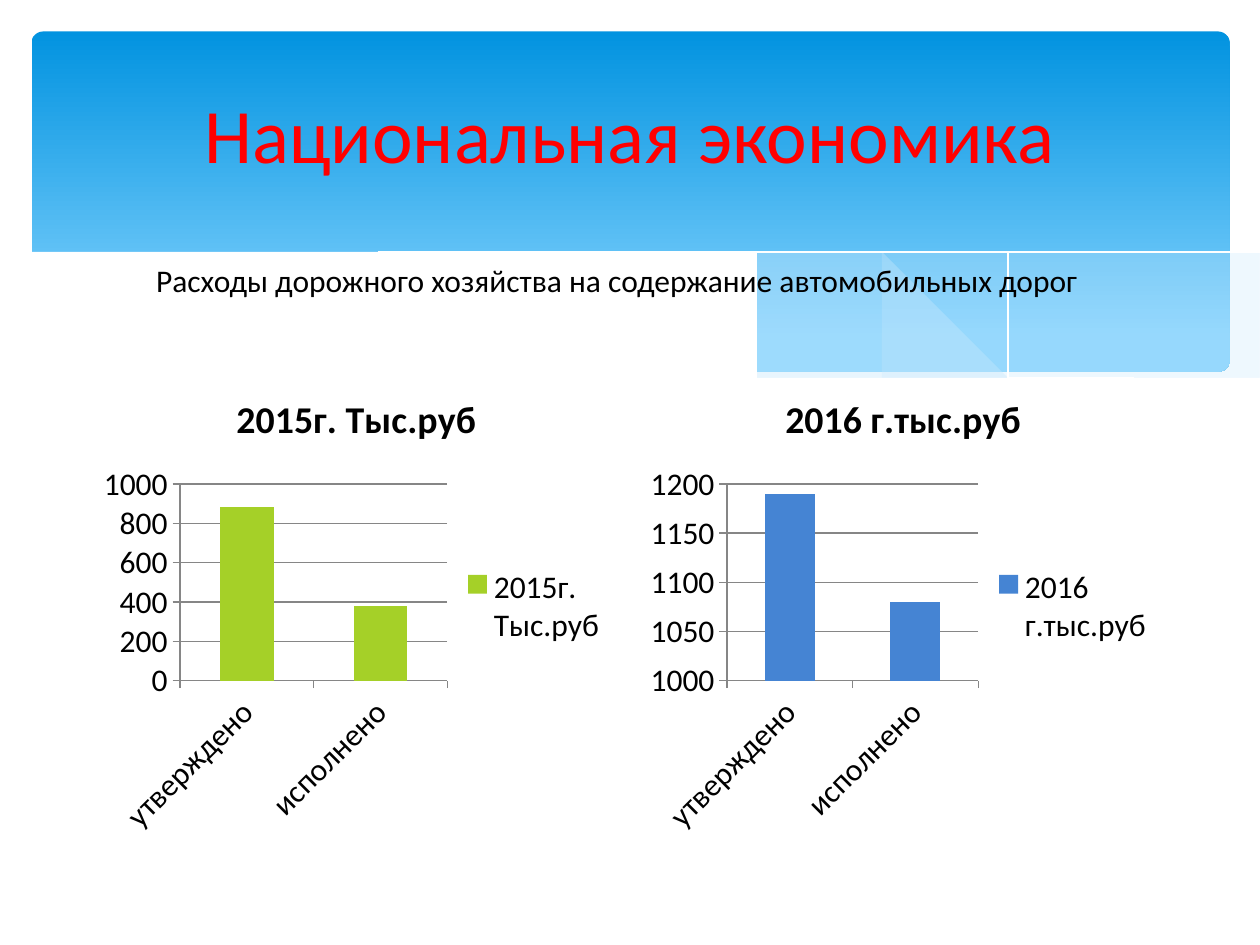
from dataclasses import dataclass

from lxml.etree import SubElement
from pptx import Presentation
from pptx.chart.data import CategoryChartData
from pptx.dml.color import RGBColor
from pptx.enum.chart import XL_CHART_TYPE as ChartType, XL_LEGEND_POSITION as LegendPos, XL_TICK_MARK as Tick
from pptx.enum.shapes import MSO_SHAPE as Preset
from pptx.enum.text import MSO_ANCHOR as Anchor, PP_ALIGN as Align
from pptx.oxml.ns import qn
from pptx.util import Inches, Pt


@dataclass(frozen=True)
class Theme:
    font: str = "Calibri"
    title_size: float = 44
    body_size: float = 18
    chart_title_size: float = 21.6
    title: str = "FF0000"
    ink: str = "000000"
    paper: str = "FFFFFF"
    banner_top: str = "0293E0"
    banner_bottom: str = "83D3FE"
    wave: str = "C6E7FC"
    axis: str = "868686"
    approved_2015: str = "A5D028"
    approved_2016: str = "4584D3"


THEME = Theme()
SLIDE_W, SLIDE_H = 10, 7.5

TITLE = "Национальная экономика"
SUBTITLE = "Расходы дорожного хозяйства на содержание автомобильных дорог"
CATEGORIES = ("утверждено", "исполнено")
# name, values, colour, axis (minimum, maximum, step)
BUDGETS = (
    ("2015г. Тыс.руб", (880, 380), THEME.approved_2015, (0, 1000, 200)),
    ("2016 г.тыс.руб", (1190, 1080), THEME.approved_2016, (1000, 1200, 50)),
)
CHART_LEFT, CHART_TOP, CHART_W, CHART_H, CHART_GAP = 0.74, 2.93, 4.18, 3.77, 0.16

# Each wave is a list of edges; an edge is smoothed through its anchors.
RIGHT_WAVE = (
    [(9.76, 2), (9.21, 2.1), (8.61, 2.23), (7.79, 2.42), (7.06, 2.57), (6.61, 2.65)],
    [(6.61, 2.65), (7.19, 2.72), (7.69, 2.77), (8.24, 2.77), (8.72, 2.74), (9.21, 2.65), (9.76, 2.47)],
)
MIDDLE_WAVE = (
    [(8.93, 2.73), (8.07, 2.6), (7.06, 2.4), (6.29, 2.22), (5.55, 2.05), (4.89, 1.94),
     (4.2, 1.87), (3.61, 1.85), (2.86, 1.91)],
    [(2.86, 1.91), (3.62, 2.03), (4.49, 2.22), (5.3, 2.4), (6.18, 2.58), (6.95, 2.7),
     (7.61, 2.77), (8.28, 2.78), (8.93, 2.73)],
)
FALLING_LINE = ([(3.09, 1.95), (3.53, 1.89), (4.16, 1.87), (4.89, 1.9), (5.56, 1.97),
                 (6.36, 2.08), (7.27, 2.26), (8.31, 2.51), (9.07, 2.72)],)
RISING_LINE = ([(6.13, 2.57), (6.72, 2.41), (7.48, 2.23), (8.36, 2.04), (8.95, 1.94), (9.38, 1.88), (9.75, 1.85)],)
PAPER_WAVE = (
    [(9.77, 2.46), (9.3, 2.62), (8.75, 2.73), (8.09, 2.77), (7.44, 2.74), (6.68, 2.65),
     (5.79, 2.5), (5.03, 2.33), (4.47, 2.2), (3.65, 2.02), (2.92, 1.9), (2.3, 1.85),
     (1.77, 1.84), (1.19, 1.87), (0.67, 1.97), (0.23, 2.13)],
    [(0.23, 3.29), (9.77, 3.29)],
)


def rgb(code):
    return RGBColor.from_string(code)


def smooth(anchors, steps=5):
    """Return points of a Catmull-Rom curve through the anchors."""
    padded = [anchors[0], *anchors, anchors[-1]]
    points = [anchors[0]]
    for a, b, c, d in zip(padded, padded[1:], padded[2:], padded[3:]):
        for step in range(1, steps + 1):
            t = step / steps
            points.append(tuple(
                0.5 * (2 * q + (r - p) * t + (2 * p - 5 * q + 4 * r - s) * t**2
                       + (3 * q - p - 3 * r + s) * t**3)
                for p, q, r, s in zip(a, b, c, d)))
    return points


def add_wave(slide, edges, fill=None, opacity=100, line=None):
    points = [point for edge in edges for point in smooth(edge)]
    builder = slide.shapes.build_freeform(*points[0], scale=Inches(1))
    builder.add_line_segments(points[1:], close=fill is not None)
    wave = builder.convert_to_shape()
    wave.shadow.inherit = False
    if fill:
        wave.fill.solid()
        wave.fill.fore_color.rgb = rgb(fill)
        if opacity < 100:
            colour = wave.fill._xPr.find(f"{qn('a:solidFill')}/{qn('a:srgbClr')}")
            SubElement(colour, qn("a:alpha"), val=str(opacity * 1000))
    else:
        wave.fill.background()
    if line:
        wave.line.color.rgb = rgb(line)
        wave.line.width = Pt(0)
    else:
        wave.line.fill.background()


def add_banner(slide):
    banner = slide.shapes.add_shape(Preset.ROUNDED_RECTANGLE, *map(Inches, (0.25, 0.25, 9.51, 2.7)))
    banner.adjustments[0] = 0.034
    banner.shadow.inherit = False
    banner.line.fill.background()
    banner.fill.gradient()
    banner.fill.gradient_angle = 270
    stops = ((0, THEME.banner_top), (0.9, THEME.banner_bottom))
    for stop, (position, colour) in zip(banner.fill.gradient_stops, stops):
        stop.position = position
        stop.color.rgb = rgb(colour)


def style_font(font, size, color=THEME.ink, bold=False):
    font.name, font.size, font.bold = THEME.font, Pt(size), bold
    font.color.rgb = rgb(color)


def add_text(slide, text, box, size, color=THEME.ink, align=Align.LEFT, anchor=Anchor.TOP, wrap=True):
    frame = slide.shapes.add_textbox(*map(Inches, box)).text_frame
    frame.word_wrap, frame.vertical_anchor = wrap, anchor
    paragraph = frame.paragraphs[0]
    paragraph.alignment = align
    run = paragraph.add_run()
    run.text = text
    style_font(run.font, size, color)


def add_budget_chart(slide, column, name, values, color, scale):
    data = CategoryChartData()
    data.categories = CATEGORIES
    data.add_series(name, values)
    left = CHART_LEFT + column * (CHART_W + CHART_GAP)
    chart = slide.shapes.add_chart(
        ChartType.COLUMN_STACKED, *map(Inches, (left, CHART_TOP, CHART_W, CHART_H)), data).chart
    style_font(chart.font, THEME.body_size)

    chart.has_title = True
    heading = chart.chart_title.text_frame
    heading.text = name
    style_font(heading.paragraphs[0].runs[0].font, THEME.chart_title_size, bold=True)
    chart.has_legend = True
    chart.legend.position = LegendPos.RIGHT
    chart.legend.include_in_layout = False

    plot = chart.plots[0]
    plot.gap_width, plot.overlap, plot.vary_by_categories = 150, 100, False
    bars = plot.series[0].format.fill
    bars.solid()
    bars.fore_color.rgb = rgb(color)

    amounts = chart.value_axis
    amounts.minimum_scale, amounts.maximum_scale, amounts.major_unit = scale
    amounts.has_major_gridlines = True
    for axis in (chart.category_axis, amounts):
        axis.major_tick_mark, axis.minor_tick_mark = Tick.OUTSIDE, Tick.NONE
        style_font(axis.tick_labels.font, THEME.body_size)
    for rule in (chart.category_axis, amounts, amounts.major_gridlines):
        rule.format.line.color.rgb = rgb(THEME.axis)
        rule.format.line.width = Pt(0.75)
    labels = chart.category_axis._element.find(f"{qn('c:txPr')}/{qn('a:bodyPr')}")
    labels.set("rot", str(-45 * 60000))


def main():
    deck = Presentation()
    deck.slide_width, deck.slide_height = Inches(SLIDE_W), Inches(SLIDE_H)
    slide = deck.slides.add_slide(deck.slide_layouts[6])

    add_banner(slide)
    add_wave(slide, RIGHT_WAVE, fill=THEME.wave, opacity=29)
    add_wave(slide, MIDDLE_WAVE, fill=THEME.wave, opacity=40)
    add_wave(slide, FALLING_LINE, line=THEME.paper)
    add_wave(slide, RISING_LINE, line=THEME.paper)
    add_wave(slide, PAPER_WAVE, fill=THEME.paper)

    add_text(slide, TITLE, (0.5, 0.37, 9, 1.37), THEME.title_size, color=THEME.title,
             align=Align.CENTER, anchor=Anchor.MIDDLE)
    for column, budget in enumerate(BUDGETS):
        add_budget_chart(slide, column, *budget)
    add_text(slide, SUBTITLE, (1.14, 2.02, 7.88, 0.4), THEME.body_size, wrap=False)
    deck.save("out.pptx")


if __name__ == "__main__":
    main()
